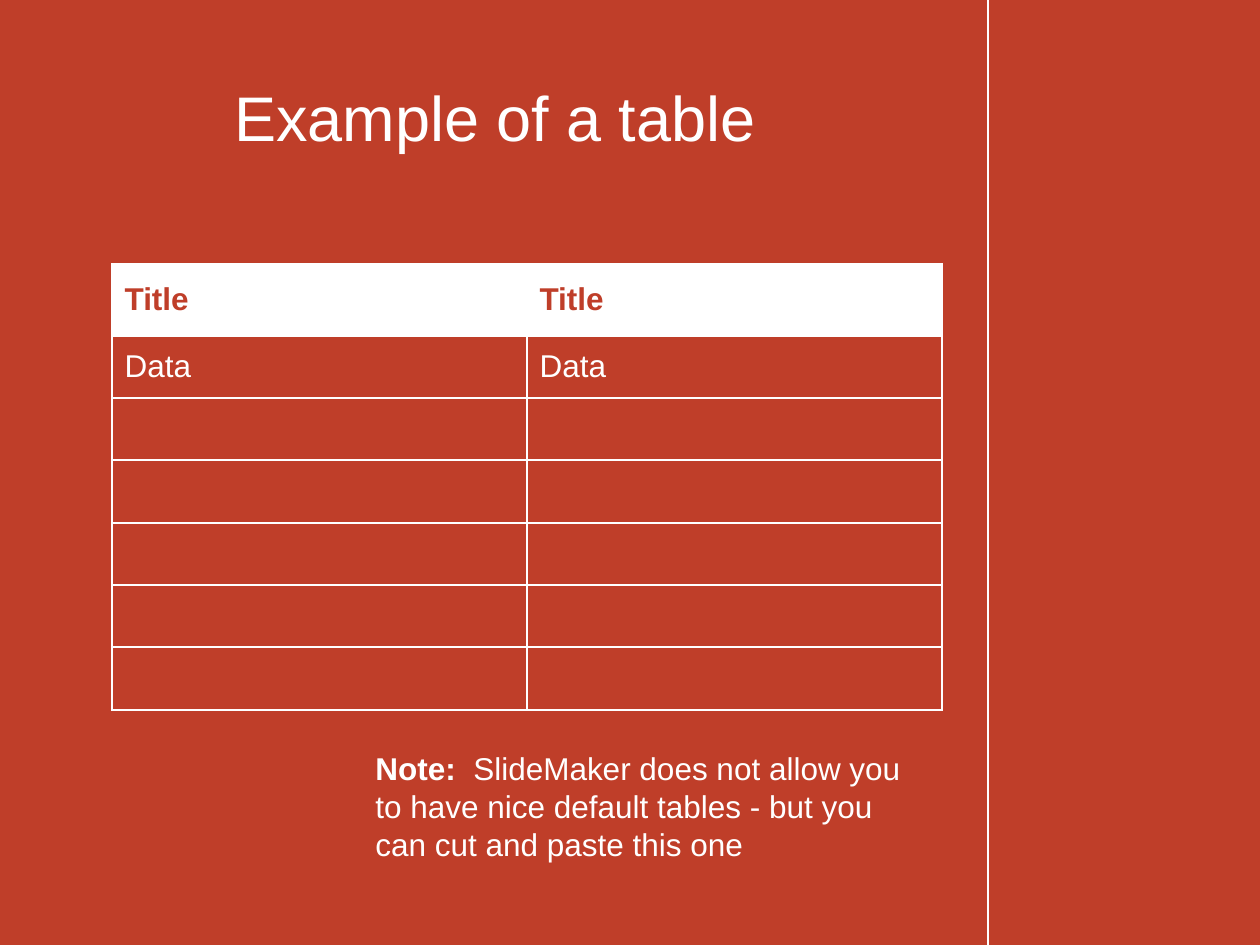
from lxml import etree
from pptx import Presentation
from pptx import util as u
from pptx.dml.color import RGBColor
from pptx.enum import shapes, text
from pptx.oxml.ns import qn

PX = 914400 / 126
RED = RGBColor(0xBF, 0x3E, 0x29)
WHITE = RGBColor(0xFF, 0xFF, 0xFF)
FONT = "Arial"


def px(*lengths):
    """Turn pixel lengths into a list of EMU."""
    return [u.Emu(round(length * PX)) for length in lengths]


def add_run(paragraph, words, size=18, color=WHITE, bold=False):
    run = paragraph.add_run()
    run.text = words
    run.font.name = FONT
    run.font.size = u.Pt(size)
    run.font.bold = bold
    run.font.color.rgb = color


prs = Presentation()
prs.slide_width, prs.slide_height = px(1260, 945)
slide = prs.slides.add_slide(prs.slide_layouts[5])
slide.background.fill.solid()
slide.background.fill.fore_color.rgb = RED

# Divider at the right
divider = slide.shapes.add_connector(
    shapes.MSO_CONNECTOR.STRAIGHT, *px(988, 0, 988, 945))
divider.line.color.rgb = WHITE
divider.line.width = u.Pt(1.5)
etree.SubElement(divider.element.spPr, qn("a:effectLst"))

# Title
title = slide.shapes.title
title.left, title.top, title.width, title.height = px(34, 38, 922, 157)
title.text_frame.vertical_anchor = text.MSO_ANCHOR.MIDDLE
heading = title.text_frame.paragraphs[0]
heading.alignment = text.PP_ALIGN.CENTER
add_run(heading, "Example of a table", size=36)

# Table
row_heights = [72] + [62, 62, 63] * 2
row_words = ["Title", "Data"]
table = slide.shapes.add_table(
    len(row_heights), 2, *px(112, 264, 830, sum(row_heights))).table
table.first_row = False
table.horz_banding = False
for column in table.columns:
    column.width = px(415)[0]
for index, (row, height) in enumerate(zip(table.rows, row_heights)):
    row.height = px(height)[0]
    is_header = index == 0
    for cell in row.cells:
        cell.vertical_anchor = text.MSO_ANCHOR.MIDDLE
        properties = cell._tc.get_or_add_tcPr()
        for side in ("a:lnL", "a:lnR", "a:lnT", "a:lnB"):
            border = etree.SubElement(properties, qn(side), w=str(u.Pt(1)))
            paint = etree.SubElement(border, qn("a:solidFill"))
            etree.SubElement(paint, qn("a:srgbClr"), val=str(WHITE))
        if is_header:
            cell.fill.solid()
            cell.fill.fore_color.rgb = WHITE
        else:
            cell.fill.background()
        if index < len(row_words):
            add_run(cell.text_frame.paragraphs[0], row_words[index],
                    color=RED if is_header else WHITE, bold=is_header)

# Note below the table
note = slide.shapes.add_textbox(*px(363, 743, 566, 126)).text_frame
note.word_wrap = True
remark = note.paragraphs[0]
add_run(remark, "Note:  ", bold=True)
add_run(remark, "SlideMaker does not allow you to have nice default tables"
                " - but you can cut and paste this one")

prs.save("out.pptx")
